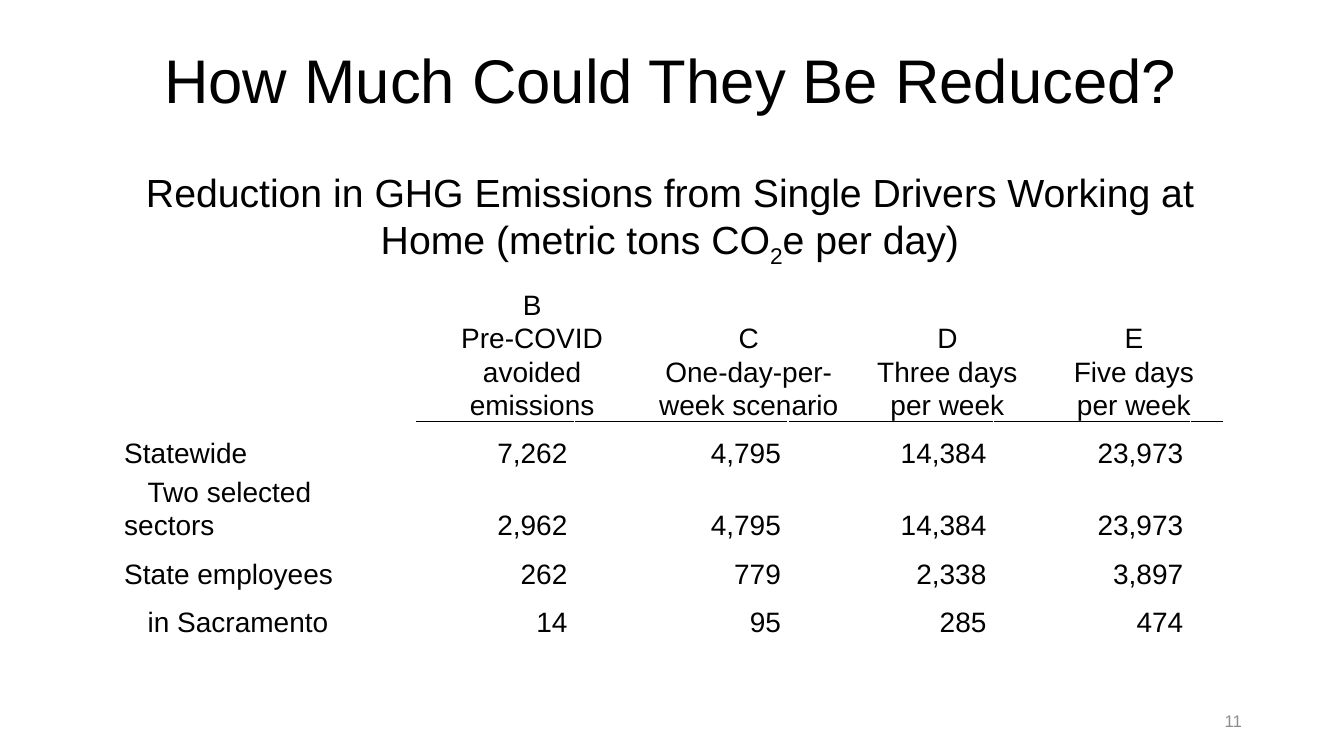
import pptx
import pptx.dml.color
import pptx.enum.text
import pptx.oxml
import pptx.oxml.ns
import pptx.util
from pptx.util import Cm

ALIGN = pptx.enum.text.PP_ALIGN
ANCHOR = pptx.enum.text.MSO_ANCHOR
BLACK, GREY = "000000", "8C8C8C"

CAPTION = [
    ("Reduction in GHG Emissions from Single Drivers Working at "
     "Home (metric tons CO", False),
    ("2", True),
    ("e per day)", False),
]
SCENARIOS = [
    ("B", "Pre-COVID avoided emissions"),
    ("C", "One-day-per-week scenario"),
    ("D", "Three days per week"),
    ("E", "Five days per week"),
]
# Group, whether it is a subgroup, and its reduction in each scenario
REDUCTIONS = [
    ("Statewide", False, ["7,262", "4,795", "14,384", "23,973"]),
    ("Two selected sectors", True, ["2,962", "4,795", "14,384", "23,973"]),
    ("State employees", False, ["262", "779", "2,338", "3,897"]),
    ("in Sacramento", True, ["14", "95", "285", "474"]),
]
COLUMN_WIDTHS = [7.54, 3.99, 1.85, 3.53, 1.55, 3.63, 1.3, 3.66, 0.81]
ROW_HEIGHTS = [3.05, 3.84] + [1.22] * len(REDUCTIONS)
CELL_FORMAT = {
    "margin_left": Cm(0.18),
    "margin_right": Cm(0.18),
    "margin_top": 0,
    "margin_bottom": 0,
    "vertical_anchor": ANCHOR.BOTTOM,
}


def apply_format(target, values):
    for name, value in values.items():
        setattr(target, name, value)


def paint(font, color):
    font.color.rgb = pptx.dml.color.RGBColor.from_string(color)


def write(paragraph, pieces, size, color=BLACK, align=ALIGN.LEFT, spacing=1.07):
    """Fill a paragraph with (text, is_subscript) pieces."""
    apply_format(paragraph, {"alignment": align, "line_spacing": spacing})
    for text, is_subscript in pieces:
        run = paragraph.add_run()
        run.text = text
        apply_format(run.font, {"name": "Arial", "size": pptx.util.Pt(size)})
        paint(run.font, color)
        if is_subscript:
            run.font._element.set("baseline", "-25000")


def add_text(slide, text, box, **text_format):
    frame = slide.shapes.add_textbox(*map(Cm, box)).text_frame
    apply_format(frame, {"word_wrap": True, "vertical_anchor": ANCHOR.MIDDLE})
    write(frame.paragraphs[0], [(text, False)], **text_format)


def write_cell(cell, lines, size=20, align=ALIGN.CENTER):
    """Write one paragraph for each list of pieces in lines."""
    frame = cell.text_frame
    for number, pieces in enumerate(lines):
        paragraph = frame.add_paragraph() if number else frame.paragraphs[0]
        write(paragraph, pieces, size, align=align)


def rule_cell(cell, side):
    line = pptx.oxml.parse_xml(
        f'<a:{side} {pptx.oxml.ns.nsdecls("a")} w="12700"><a:solidFill>'
        f'<a:srgbClr val="{BLACK}"/></a:solidFill></a:{side}>')
    cell._tc.get_or_add_tcPr().insert(0, line)


def add_reduction_table(slide):
    frame = slide.shapes.add_table(
        len(ROW_HEIGHTS), len(COLUMN_WIDTHS), Cm(2.95), Cm(3.73),
        Cm(sum(COLUMN_WIDTHS)), Cm(sum(ROW_HEIGHTS)))
    table = frame.table
    apply_format(table, {"first_row": False, "horz_banding": False})
    for column, width in zip(table.columns, COLUMN_WIDTHS):
        column.width = Cm(width)
    for row, height in zip(table.rows, ROW_HEIGHTS):
        row.height = Cm(height)
    for cell in table.iter_cells():
        apply_format(cell, CELL_FORMAT)
        cell.fill.background()

    caption = table.cell(0, 0)
    caption.merge(table.cell(0, len(COLUMN_WIDTHS) - 1))
    write_cell(caption, [CAPTION], size=28)

    for number, scenario in enumerate(SCENARIOS):
        column = 1 + 2 * number
        heading = table.cell(1, column)
        heading.merge(table.cell(1, column + 1))
        write_cell(heading, [[(line, False)] for line in scenario])
    for column in range(1, len(COLUMN_WIDTHS)):
        rule_cell(table.cell(1, column), "lnB")
        rule_cell(table.cell(2, column), "lnT")

    for row, (group, is_subgroup, values) in enumerate(REDUCTIONS, start=2):
        label = table.cell(row, 0)
        write_cell(label, [[(group, False)]], align=ALIGN.LEFT)
        if is_subgroup:
            properties = label.text_frame.paragraphs[0]._p.get_or_add_pPr()
            properties.set("indent", str(Cm(0.59)))
        for number, value in enumerate(values):
            write_cell(table.cell(row, 1 + 2 * number), [[(value, False)]],
                       align=ALIGN.RIGHT)


def main():
    deck = pptx.Presentation()
    apply_format(deck, {"slide_width": Cm(33.87), "slide_height": Cm(19.05)})
    slide = deck.slides.add_slide(deck.slide_layouts[6])
    add_text(slide, "11", (23.93, 17.65, 7.62, 1.02),
             size=12, color=GREY, align=ALIGN.RIGHT, spacing=1.0)
    add_text(slide, "How Much Could They Be Reduced?",
             (3.89, 0.66, 27.66, 2.9), size=44, spacing=0.9)
    add_reduction_table(slide)
    deck.save("out.pptx")


if __name__ == "__main__":
    main()
